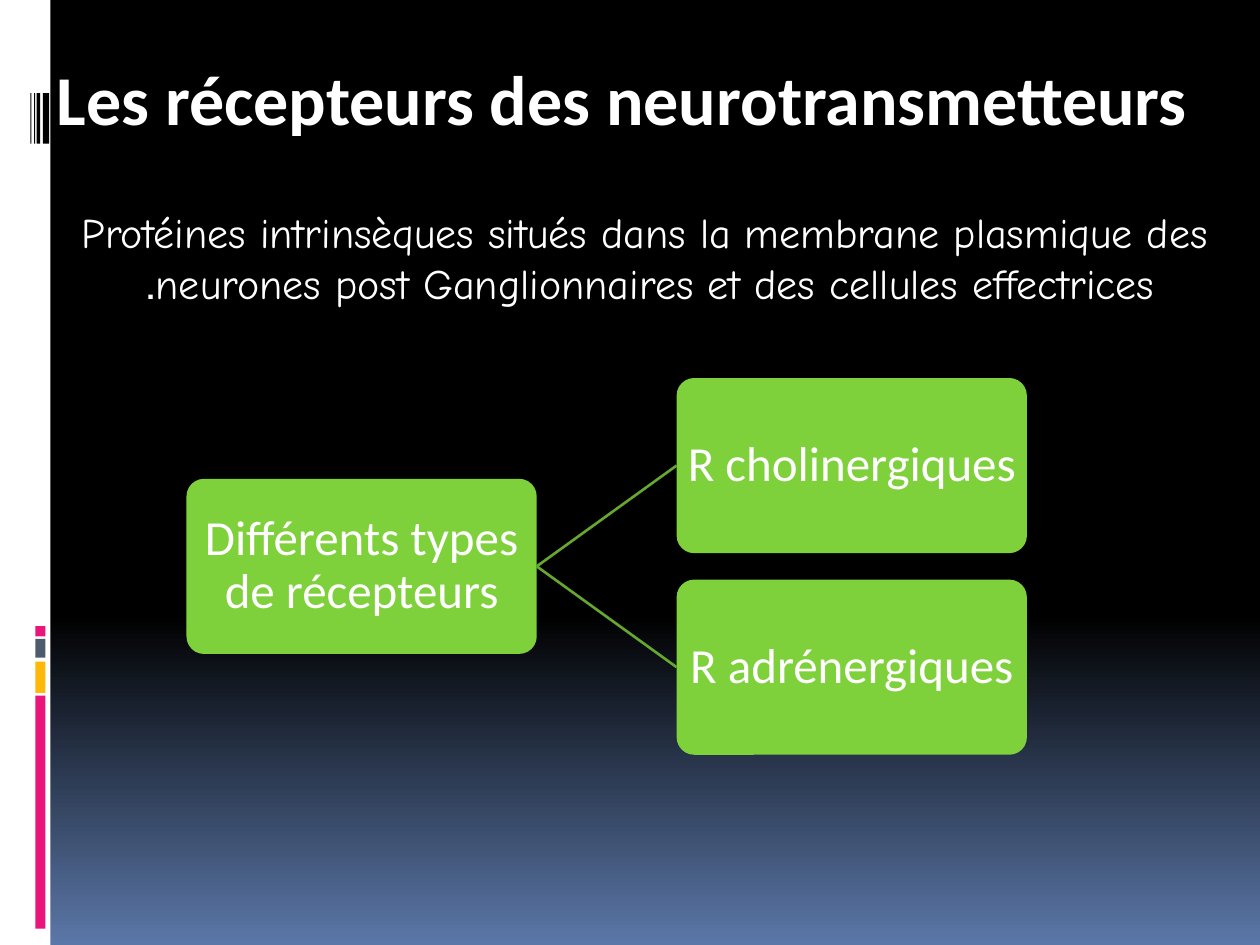
from copy import deepcopy

from pptx import Presentation
from pptx import util as u
from pptx.dml.color import RGBColor
from pptx.enum import shapes, text
from pptx.oxml.ns import qn

Inches, Pt = u.Inches, u.Pt
WHITE, BLACK, PINK = "FFFFFF", "000000", "EA157A"
GREEN, DARK_GREEN = "7FD13B", "66A72F"


def rgb(hex_color):
    return RGBColor.from_string(hex_color)


def set_background(slide, stops):
    """Fill the slide with a top-to-bottom gradient of (position, colour) stops."""
    fill = slide.background.fill
    fill.gradient()
    fill.gradient_angle = 270
    first = fill.gradient_stops[0]
    gs = slide.background._cSld.find(".//" + qn("a:gs"))
    for _ in range(len(stops) - len(fill.gradient_stops)):
        gs.addnext(deepcopy(gs))
    for stop, (position, color) in zip(fill.gradient_stops, stops):
        stop.position = position
        stop.color.rgb = rgb(color)


def add_block(slide, kind, x, y, w, h, color):
    sp = slide.shapes.add_shape(kind, Inches(x), Inches(y), Inches(w), Inches(h))
    sp.shadow.inherit = False
    sp.fill.solid()
    sp.fill.fore_color.rgb = rgb(color)
    sp.line.fill.background()
    return sp


def write(sp, words, size, font, bold=False, rtl=False):
    """Put one centred white paragraph into a shape."""
    tf = sp.text_frame
    tf.word_wrap = True
    p = tf.paragraphs[0]
    p.alignment = text.PP_ALIGN.CENTER
    p.space_before = Pt(0)
    if rtl:
        p._p.get_or_add_pPr().set("rtl", "1")
    r = p.add_run()
    r.text = words
    r.font.size = Pt(size)
    r.font.name = font
    r.font.bold = bold
    r.font.color.rgb = rgb(WHITE)
    return p


def add_side_band(slide, x, y, w, h):
    rect = shapes.MSO_SHAPE.RECTANGLE
    add_block(slide, rect, x, y, w, h, WHITE)
    for dx, width in [(0.34, 0.05), (0.29, 0.03), (0.27, 0.01), (0.24, 0.01)]:
        add_block(slide, rect, x + dx, y + 0.74, width, 0.4, BLACK)
    for dy, height, color in [(5.52, 1.85, PINK), (5.25, 0.25, "FEB80A"),
                              (5.07, 0.15, "4E5B6F"), (4.97, 0.08, PINK)]:
        add_block(slide, rect, x + 0.28, y + dy, 0.08, height, color)


def place(sp, x, y, w, h):
    sp.left, sp.top, sp.width, sp.height = map(Inches, (x, y, w, h))
    sp.text_frame.vertical_anchor = text.MSO_ANCHOR.TOP
    sp.text_frame.auto_size = text.MSO_AUTO_SIZE.SHAPE_TO_FIT_TEXT


def add_title(slide, words, *box):
    sp = slide.shapes.title
    place(sp, *box)
    write(sp, words, 40, "Calibri", bold=True)


def add_definition(slide, words, *box):
    sp = slide.placeholders[1]
    place(sp, *box)
    pPr = sp.text_frame.paragraphs[0]._p.get_or_add_pPr()
    pPr.set("marL", "0")
    pPr.set("indent", "0")
    pPr.append(pPr.makeelement(qn("a:buNone"), {}))
    write(sp, words, 24, "Comic Neue", rtl=True)


def add_node(slide, words, x, y, w, h, rtl):
    sp = add_block(slide, shapes.MSO_SHAPE.ROUNDED_RECTANGLE, x, y, w, h, GREEN)
    sp.adjustments[0] = 0.1
    tf = sp.text_frame
    tf.margin_left = tf.margin_right = tf.margin_top = tf.margin_bottom = Inches(0.02)
    tf.vertical_anchor = text.MSO_ANCHOR.MIDDLE
    write(sp, words, 28, "Calibri", rtl=rtl).line_spacing = 0.9
    return sp


def add_link(slide, parent, child):
    cn = slide.shapes.add_connector(shapes.MSO_CONNECTOR.STRAIGHT, 0, 0, 0, 0)
    cn.begin_connect(parent, 3)
    cn.end_connect(child, 1)
    cn.line.color.rgb = rgb(DARK_GREEN)
    cn.line.width = Pt(1.5)
    spPr = cn._element.spPr
    spPr.append(spPr.makeelement(qn("a:effectLst"), {}))


def add_tree(slide, root, children, x, y, w, h):
    """Draw a root on the left, centred on a column of children on the right."""
    node_w, node_h = 2.78, 1.39
    step = (h - node_h) / (len(children) - 1)
    parent = add_node(slide, root, x, y + (h - node_h) / 2, node_w, node_h, True)
    for i, (words, rtl) in enumerate(children):
        child = add_node(slide, words, x + w - node_w, y + i * step,
                         node_w, node_h, rtl)
        add_link(slide, parent, child)


def main():
    prs = Presentation()
    prs.slide_width, prs.slide_height = Inches(10), Inches(7.5)
    s = prs.slides.add_slide(prs.slide_layouts[1])
    set_background(s, [(0, BLACK), (0.65, BLACK), (1, "5B77A8")])
    add_side_band(s, 0, 0, 0.4, 7.5)
    add_title(s, "Les récepteurs des neurotransmetteurs ", 0, 0.39, 10, 0.77)
    add_definition(s, "Protéines intrinsèques situés dans la membrane plasmique des "
                   "neurones post Ganglionnaires et des cellules effectrices. ",
                   0.23, 1.59, 9.77, 1.31)
    add_tree(s, "Différents types de récepteurs",
             [("R cholinergiques", False), ("R adrénergiques", True)],
             1.48, 3, 6.67, 2.99)
    prs.save("out.pptx")


if __name__ == "__main__":
    main()
